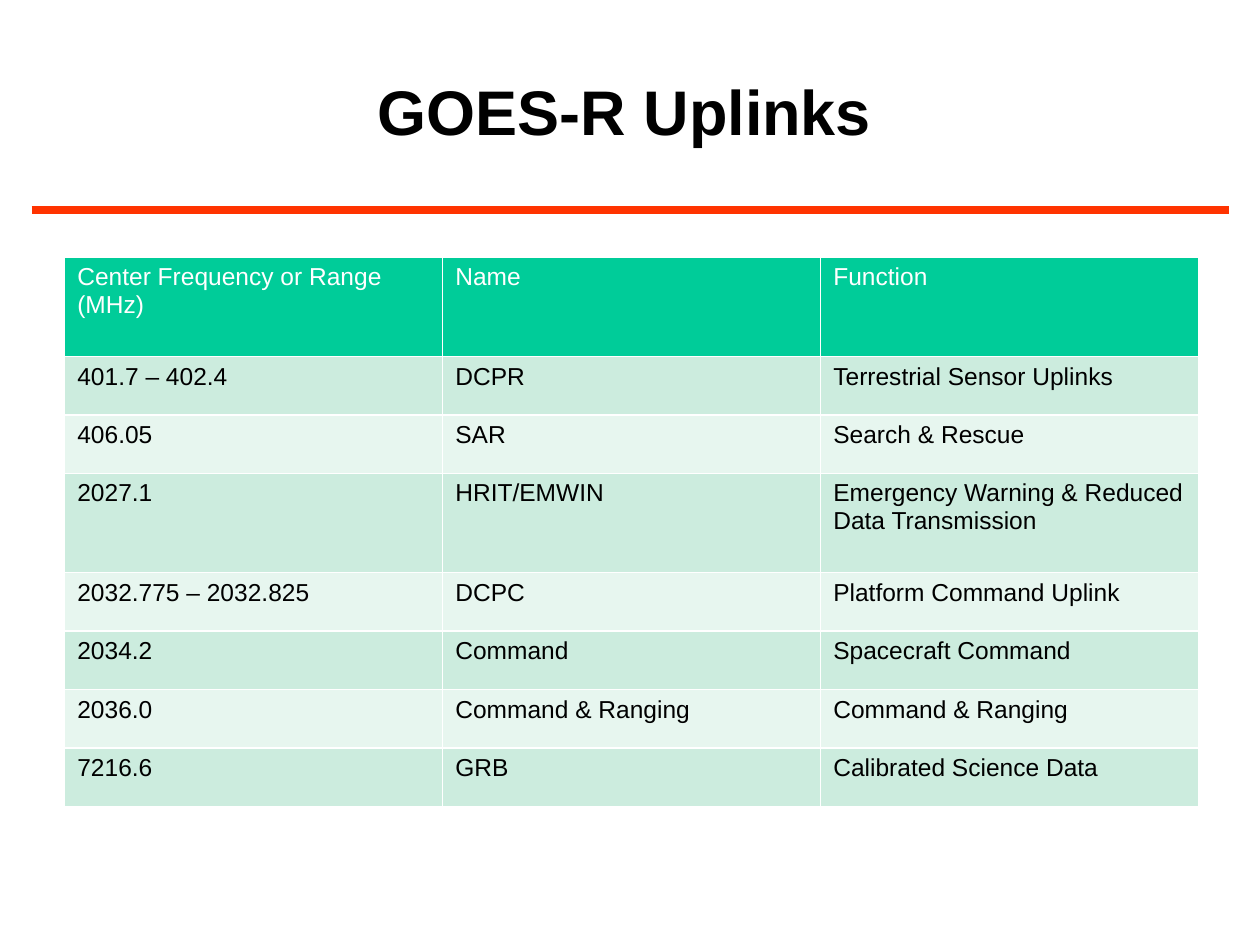
"""Build the slide that lists the GOES-R uplinks in a table."""
import pptx
import pptx.dml.color
import pptx.enum.shapes
import pptx.enum.text
import pptx.oxml
import pptx.oxml.ns
import pptx.util

Pt = pptx.util.Pt
HUES = {"ink": "000000", "paper": "FFFFFF", "rule": "FF3300",
        "head": "00CC99", "odd": "CCECDE", "even": "E7F6EF"}
ROWS = [
    ("Center Frequency or Range (MHz)", "Name", "Function"),
    ("401.7 – 402.4", "DCPR", "Terrestrial Sensor Uplinks"),
    ("406.05", "SAR", "Search & Rescue"),
    ("2027.1", "HRIT/EMWIN", "Emergency Warning & Reduced Data Transmission"),
    ("2032.775 – 2032.825", "DCPC", "Platform Command Uplink"),
    ("2034.2", "Command", "Spacecraft Command"),
    ("2036.0", "Command & Ranging", "Command & Ranging"),
    ("7216.6", "GRB", "Calibrated Science Data"),
]
TALL = (0, 3)


class Deck:
    """Hold the style and the current slide."""

    def __init__(self):
        """Open a show with one title-only slide."""
        self.show = pptx.Presentation()
        self.show.slide_width, self.show.slide_height = Pt(720), Pt(540)
        self.slide = self.show.slides.add_slide(self.show.slide_layouts[5])

    def hue(self, name):
        """Return the named colour."""
        return pptx.dml.color.RGBColor.from_string(HUES[name])

    def style(self, item, values):
        """Set each value as an attribute of the item."""
        for key, value in values.items():
            setattr(item, key, value)

    def label(self, frame, text, hue, size, bold=False):
        """Put one styled paragraph in a text frame."""
        frame.text = text
        font = frame.paragraphs[0].font
        self.style(font, {"name": "Arial", "size": Pt(size), "bold": bold})
        font.color.rgb = self.hue(hue)

    def title(self, text, left, top, width, height):
        """Place and fill the title."""
        shape = self.slide.shapes.title
        self.style(shape, {"left": Pt(left), "top": Pt(top),
                           "width": Pt(width), "height": Pt(height)})
        frame = shape.text_frame
        sides = ("left", "top", "right", "bottom")
        self.style(frame, {f"margin_{side}": Pt(7.2) for side in sides})
        self.style(frame, {"word_wrap": True,
                           "vertical_anchor": pptx.enum.text.MSO_ANCHOR.MIDDLE})
        self.label(frame, text, "ink", 36, True)
        frame.paragraphs[0].alignment = pptx.enum.text.PP_ALIGN.CENTER

    def rule(self, left, right, top, weight):
        """Draw a level line."""
        line = self.slide.shapes.add_connector(
            pptx.enum.shapes.MSO_CONNECTOR.STRAIGHT,
            Pt(left), Pt(top), Pt(right), Pt(top))
        line.line.width = Pt(weight)
        line.line.color.rgb = self.hue("rule")
        line._element.spPr.append(
            pptx.oxml.parse_xml(f"<a:effectLst {pptx.oxml.ns.nsdecls('a')}/>"))

    def table(self, rows, left, top, width, tall, low):
        """Draw a banded table with a header row."""
        highs = [tall if n in TALL else low for n in range(len(rows))]
        grid = self.slide.shapes.add_table(
            len(rows), len(rows[0]), Pt(left), Pt(top),
            Pt(width), Pt(sum(highs))).table
        for n, (row, high) in enumerate(zip(rows, highs)):
            grid.rows[n].height = Pt(high)
            fill = "head" if n == 0 else "odd" if n % 2 else "even"
            for cell, text in zip(grid.rows[n].cells, row):
                self.label(cell.text_frame, text, "ink" if n else "paper", 14)
                cell.fill.solid()
                cell.fill.fore_color.rgb = self.hue(fill)


def main():
    """Build and save the slide."""
    deck = Deck()
    deck.rule(18, 702, 120, 4.5)
    deck.title("GOES-R Uplinks", 114, 18, 486, 90)
    deck.table(ROWS, 37, 147, 648, 56.7, 33.4)
    deck.show.save("out.pptx")


if __name__ == "__main__":
    main()
